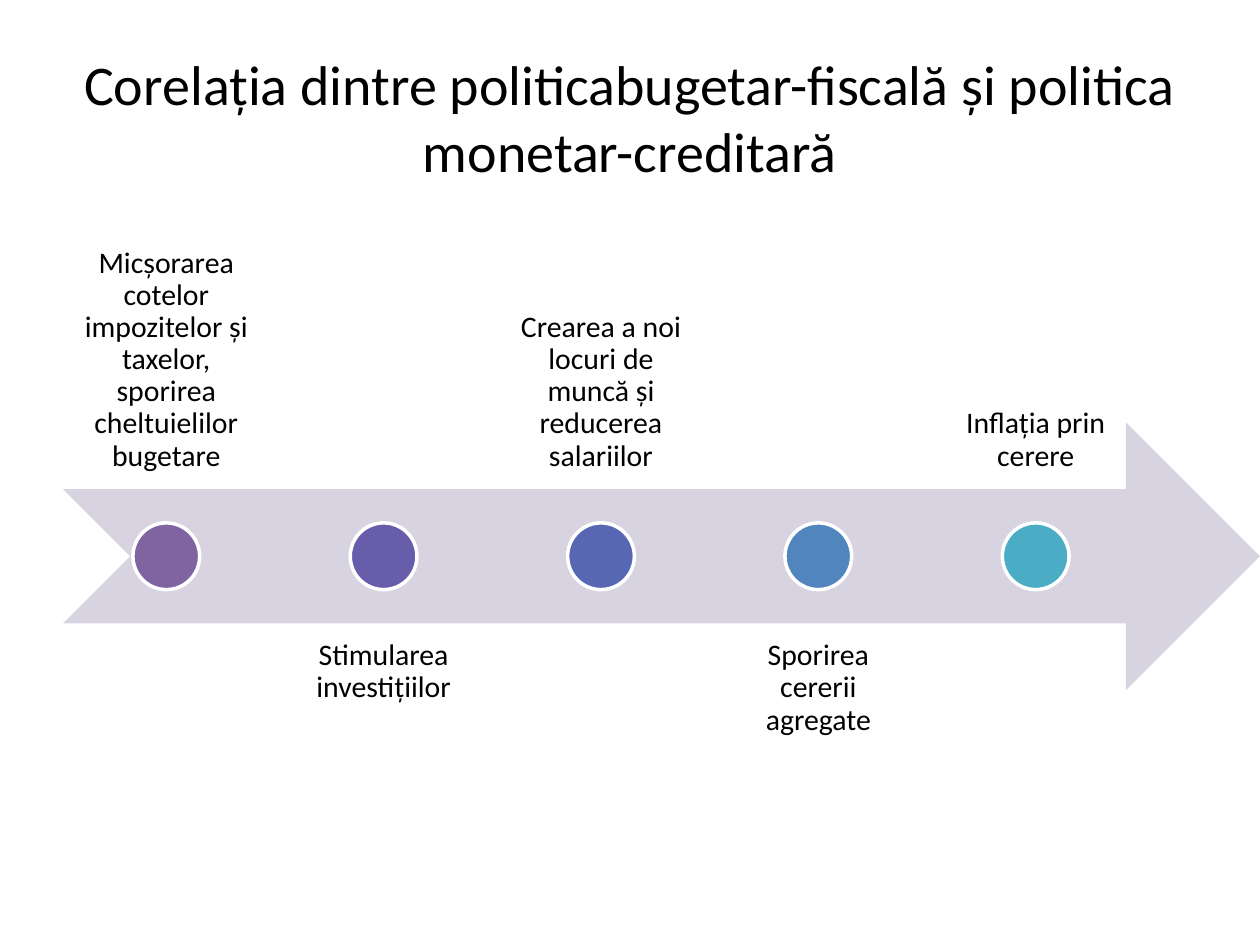
from pptx import Presentation
from pptx.dml.color import RGBColor
from pptx.enum.shapes import MSO_SHAPE as SHAPE
from pptx.enum.text import MSO_ANCHOR as ANCHOR, PP_ALIGN as ALIGN
from pptx.util import Inches, Pt

STEPS = [
    ("Micșorarea cotelor impozitelor și taxelor, sporirea cheltuielilor bugetare", "8064A2"),
    ("Stimularea investițiilor", "685DAB"),
    ("Crearea a noi locuri de muncă și reducerea salariilor", "5767B4"),
    ("Sporirea cererii agregate", "5185BD"),
    ("Inflația prin cerere", "4BACC6"),
]

# Timeline grid, in inches
LEFT, PITCH = 0.5, 1.725
LABEL_W, BAND_H, DOT = 1.64, 2.13, 0.53
ARROW_TOP = 3.35
ABOVE_TOP, BELOW_TOP = ARROW_TOP - 1.6, ARROW_TOP + 1.6


def color(value):
    return RGBColor.from_string(value)


def write(tf, text, size, anchor):
    tf.word_wrap = True
    tf.vertical_anchor = anchor
    p = tf.paragraphs[0]
    p.text = text
    p.alignment = ALIGN.CENTER
    p.font.name = "Calibri"
    p.font.size = Pt(size)
    p.font.color.rgb = color("000000")
    return p


prs = Presentation()
prs.slide_width, prs.slide_height = Inches(10), Inches(7.5)
s = prs.slides.add_slide(prs.slide_layouts[5])

# Title
title = s.shapes.title
title.left, title.top = Inches(0.5), Inches(0.3)
title.width, title.height = Inches(9), Inches(1.25)
write(title.text_frame,
      "Corelația dintre politicabugetar-fiscală și politica monetar-creditară",
      32, ANCHOR.MIDDLE)

# Arrow behind the steps
timeline = s.shapes.add_group_shape().shapes
arrow = timeline.add_shape(SHAPE.NOTCHED_RIGHT_ARROW, Inches(LEFT), Inches(ARROW_TOP),
                           Inches(9.5), Inches(BAND_H))
arrow.shadow.inherit = False
arrow.fill.solid()
arrow.fill.fore_color.rgb = color("D8D3E0")
arrow.line.fill.background()

# Steps: labels alternate above and below the arrow
for i, (text, fill) in enumerate(STEPS):
    x = LEFT + i * PITCH
    above = i % 2 == 0
    label = timeline.add_textbox(Inches(x), Inches(ABOVE_TOP if above else BELOW_TOP),
                                 Inches(LABEL_W), Inches(BAND_H))
    tf = label.text_frame
    tf.margin_left = tf.margin_right = tf.margin_top = tf.margin_bottom = Inches(0.13)
    p = write(tf, text, 17, ANCHOR.BOTTOM if above else ANCHOR.TOP)
    p.line_spacing = 0.9

    dot = timeline.add_shape(SHAPE.OVAL, Inches(x + (LABEL_W - DOT) / 2),
                             Inches(ARROW_TOP + (BAND_H - DOT) / 2), Inches(DOT), Inches(DOT))
    dot.shadow.inherit = False
    dot.fill.solid()
    dot.fill.fore_color.rgb = color(fill)
    dot.line.color.rgb = color("FFFFFF")
    dot.line.width = Pt(2)

prs.save("out.pptx")
